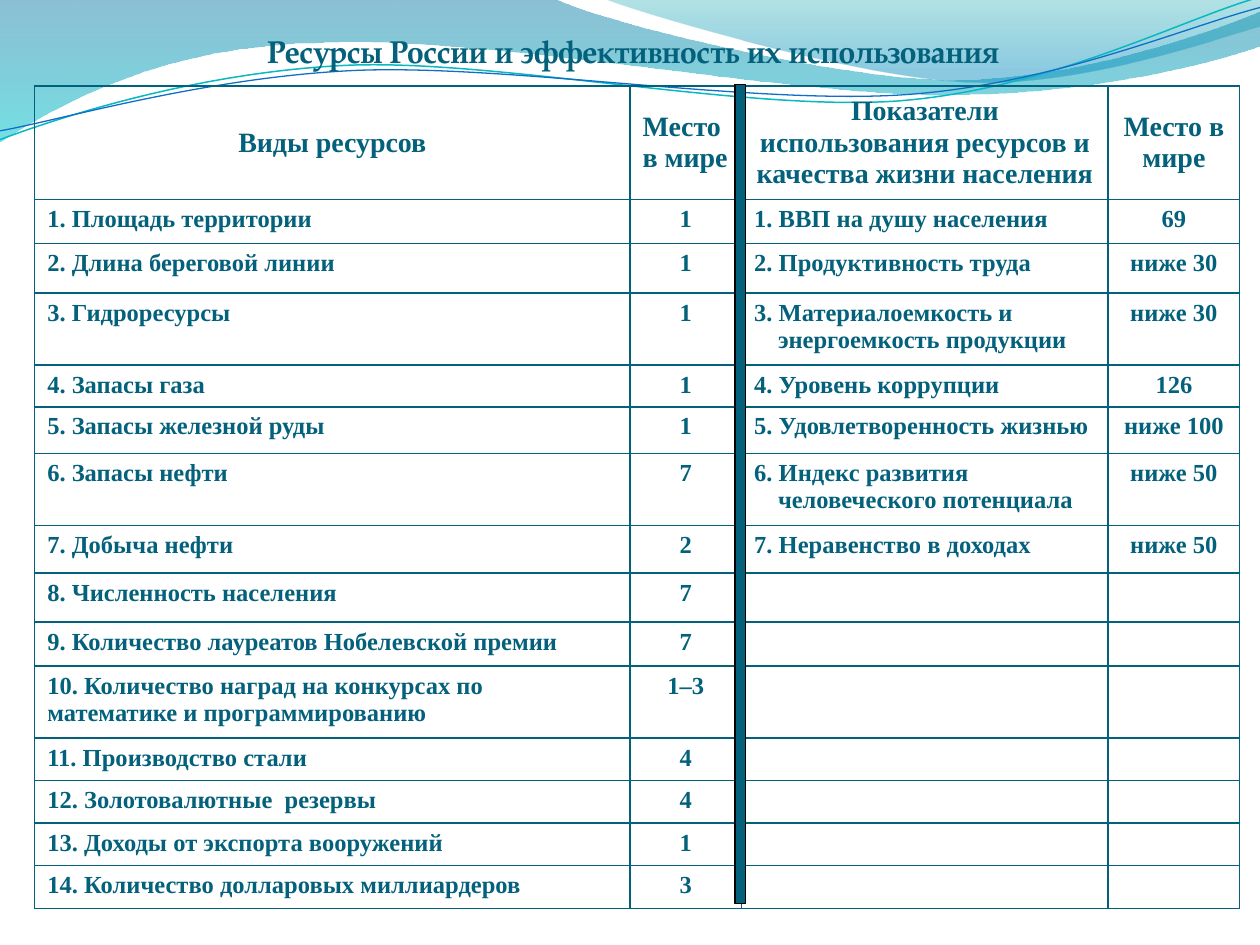
from dataclasses import dataclass
from lxml import etree
from pptx import Presentation
from pptx.dml.color import RGBColor
from pptx.enum.shapes import MSO_SHAPE
from pptx.enum.text import MSO_ANCHOR, MSO_AUTO_SIZE, PP_ALIGN
from pptx.oxml.ns import qn
from pptx.util import Cm, Pt

LEFT, CENTER = PP_ALIGN.LEFT, PP_ALIGN.CENTER
TOP, MIDDLE, BOTTOM = MSO_ANCHOR.TOP, MSO_ANCHOR.MIDDLE, MSO_ANCHOR.BOTTOM
RECTANGLE = MSO_SHAPE.RECTANGLE
TEAL = "04617B"
FONT, TITLE_FONT = "Times New Roman", "TeX Gyre Pagella"


@dataclass
class Stop:
    position: float
    color: str
    opacity: int


@dataclass
class Wave:
    """Outline in cm: a segment of one point is a line, of three a Bezier curve."""
    start: tuple
    segments: list
    stops: tuple = ()
    line: str = ""
    width: float = 0
    rotation: float = 0


WAVES = [
    Wave((-0.03, -0.03), [
        [(11.18, -0.03)],
        [(12.09, 0.43), (16.87, 1.6), (19.25, 1.6)],
        [(21.67, 1.6), (24.33, 0.66), (25.4, 0.23)],
        [(25.43, 0.91)],
        [(24.97, 1.12), (22.1, 1.93), (18.95, 1.91)],
        [(15.8, 1.91), (9.7, 0.71), (6.53, 0.86)],
        [(3.28, 0.89), (1.17, 2.11), (-0.03, 2.87)],
    ], stops=(Stop(0, "0074A1", 45), Stop(1, "00C6CF", 55))),
    Wave((12.17, -0.03), [
        [(12.93, 0.28), (17.32, 1.57), (19.53, 1.65)],
        [(21.74, 1.75), (24.41, 0.81), (25.4, 0.53)],
        [(25.4, 0)],
    ], stops=(Stop(0, "00A1A9", 30), Stop(0.8, "008BBF", 45))),
    Wave((-0.06, 2.22), [
        [(1.18, 1.82), (4.01, 1.04), (7.04, 1.05)],
        [(10.05, 1.07), (15.02, 2.37), (18.08, 2.29)],
        [(21.14, 2.2), (23.88, 0.91), (25.42, 0.55)],
    ], line="0AB8BF", width=0.85, rotation=357.3),
    Wave((-0.05, 2.04), [
        [(1.15, 1.89), (4.16, 1.15), (7.19, 1.16)],
        [(10.25, 1.18), (15.14, 2.23), (18.19, 2.17)],
        [(21.22, 2.11), (23.95, 1.06), (25.46, 0.75)],
    ], line="0F6FC6", width=0.75, rotation=357.3),
]

COLUMNS = [12, 2.25, 7.39, 2.65]
ROWS = [2.29, 0.89, 1, 1.45, 0.84, 0.94, 1.45, 0.96,
        0.99, 0.89, 1.45, 0.84, 0.84, 0.84, 0.87]
HEADER = ["Виды ресурсов", "Место \vв мире",
          "Показатели использования ресурсов и качества жизни населения",
          "Место в мире"]
RESOURCES = [
    ("Площадь территории", "1"), ("Длина береговой линии", "1"),
    ("Гидроресурсы", "1"), ("Запасы газа", "1"),
    ("Запасы железной руды", "1"), ("Запасы нефти", "7"),
    ("Добыча нефти", "2"), ("Численность населения", "7"),
    ("Количество лауреатов Нобелевской премии", "7"),
    ("Количество наград на конкурсах по математике и программированию", "1–3"),
    ("Производство стали", "4"), ("Золотовалютные  резервы", "4"),
    ("Доходы от экспорта вооружений", "1"),
    ("Количество долларовых миллиардеров", "3"),
]
INDICATORS = [
    ("ВВП на душу населения", "69"), ("Продуктивность труда", "ниже 30"),
    ("Материалоемкость и энергоемкость продукции", "ниже 30"),
    ("Уровень коррупции", "126"), ("Удовлетворенность жизнью", "ниже 100"),
    ("Индекс развития человеческого потенциала", "ниже 50"),
    ("Неравенство в доходах", "ниже 50"),
]


def rgb(color: str) -> RGBColor:
    return RGBColor.from_string(color)


def write(tf, text: str, size: float, font: str = FONT, align=LEFT, hanging: float = 0) -> None:
    p = tf.paragraphs[0]
    p.text = text
    p.alignment = align
    if hanging:
        pPr = p._p.get_or_add_pPr()
        pPr.set("marL", str(Cm(hanging)))
        pPr.set("indent", str(-Cm(hanging)))
    if not text:
        p._p.get_or_add_endParaRPr().set("sz", str(int(size * 100)))
    for r in p.runs:
        r.font.size, r.font.name, r.font.bold = Pt(size), font, True
        r.font.color.rgb = rgb(TEAL)


def bend(sp, segments: list) -> None:
    """Join each three line steps of a curved segment into one Bezier step."""
    steps = iter(list(sp._element.iter(qn("a:lnTo"))))
    for segment in segments:
        parts = [next(steps) for _ in segment]
        if len(parts) == 3:
            curve = etree.Element(qn("a:cubicBezTo"))
            parts[0].addprevious(curve)
            for part in parts:
                curve.append(part[0])
                part.getparent().remove(part)


def add_wave(s, wave: Wave) -> None:
    points = [point for segment in wave.segments for point in segment]
    builder = s.shapes.build_freeform(Cm(wave.start[0]), Cm(wave.start[1]))
    builder.add_line_segments([(Cm(x), Cm(y)) for x, y in points], close=bool(wave.stops))
    sp = builder.convert_to_shape()
    bend(sp, wave.segments)
    sp.rotation = wave.rotation
    sp.shadow.inherit = False
    if not wave.stops:
        sp.fill.background()
        sp.line.color.rgb = rgb(wave.line)
        sp.line.width = Pt(wave.width)
        return
    sp.line.fill.background()
    sp.fill.gradient()
    sp.fill.gradient_angle = 270
    for target, stop in zip(sp.fill.gradient_stops, wave.stops):
        target.position = stop.position
        target.color.rgb = rgb(stop.color)
    for clr, stop in zip(sp._element.spPr.iter(qn("a:srgbClr")), wave.stops):
        etree.SubElement(clr, qn("a:alpha"), val=str(stop.opacity * 1000))


def set_borders(cell, color: str, width: float) -> None:
    tcPr = cell._tc.get_or_add_tcPr()
    for side in ("a:lnL", "a:lnR", "a:lnT", "a:lnB"):
        ln = etree.SubElement(tcPr, qn(side), w=str(Pt(width)))
        fill = etree.SubElement(ln, qn("a:solidFill"))
        etree.SubElement(fill, qn("a:srgbClr"), val=color)


def numbered(items: list) -> list:
    return [(f"{i}. {name}", place) for i, (name, place) in enumerate(items, 1)]


def add_ranking(s, left: float, top: float) -> None:
    table = s.shapes.add_table(len(ROWS), len(COLUMNS), Cm(left), Cm(top),
                               Cm(sum(COLUMNS)), Cm(sum(ROWS))).table
    table.first_row = table.horz_banding = False
    for column, width in zip(table.columns, COLUMNS):
        column.width = Cm(width)
    for row, height in zip(table.rows, ROWS):
        row.height = Cm(height)
    blanks = [("", "")] * (len(RESOURCES) - len(INDICATORS))
    pairs = zip(numbered(RESOURCES), numbered(INDICATORS) + blanks)
    for i, texts in enumerate([HEADER] + [a + b for a, b in pairs]):
        for j, text in enumerate(texts):
            cell = table.cell(i, j)
            set_borders(cell, TEAL, 1)
            cell.fill.background()
            if i == 0:
                cell.vertical_anchor = MIDDLE
                write(cell.text_frame, text, 16, align=LEFT if j == 1 else CENTER)
            else:
                cell.vertical_anchor = TOP
                write(cell.text_frame, text, 14, align=CENTER if j % 2 else LEFT,
                      hanging=0.48 if j == 2 else 0)


def main() -> None:
    prs = Presentation()
    prs.slide_width, prs.slide_height = Cm(25.4), Cm(19.05)
    s = prs.slides.add_slide(prs.slide_layouts[5])

    # Background waves
    for wave in WAVES:
        add_wave(s, wave)

    # Resources and indicators
    add_ranking(s, 0.7, 1.73)

    # Title, brought in front of the waves
    title = s.shapes.title
    title.left, title.top, title.width, title.height = Cm(0.5), Cm(0), Cm(24.9), Cm(1.42)
    tf = title.text_frame
    tf.auto_size, tf.word_wrap, tf.vertical_anchor = MSO_AUTO_SIZE.NONE, True, BOTTOM
    tf.margin_right, tf.margin_bottom = Cm(0.61), Cm(0.02)
    write(tf, "Ресурсы России и эффективность их использования", 18, TITLE_FONT, CENTER)
    s.shapes._spTree.append(title._element)

    # Divider between the two halves
    bar = s.shapes.add_shape(RECTANGLE, Cm(14.82), Cm(1.7), Cm(0.21), Cm(16.51))
    bar.shadow.inherit = False
    bar.fill.solid()
    bar.fill.fore_color.rgb = rgb(TEAL)
    bar.line.color.rgb = rgb("000000")
    bar.line.width = Pt(0.75)

    prs.save("out.pptx")


if __name__ == "__main__":
    main()
